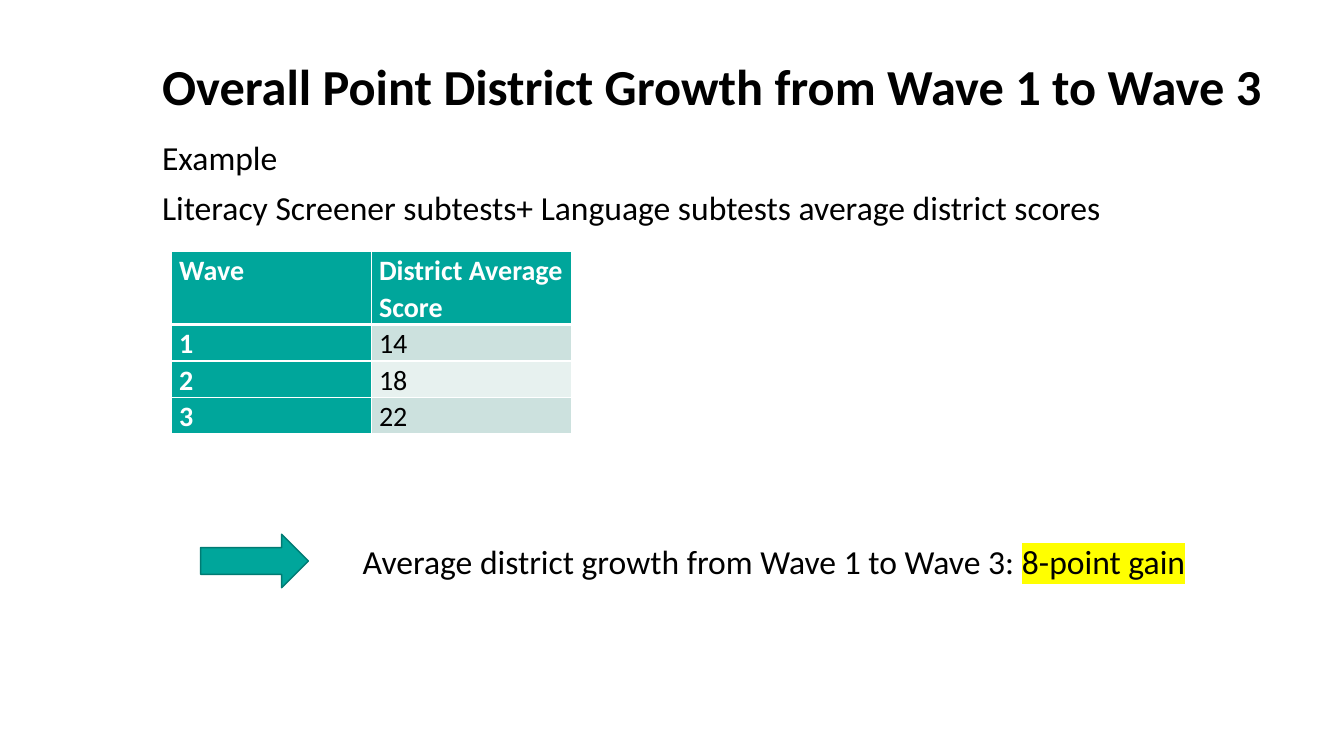
import pptx
import pptx.util
import pptx.dml.color
import pptx.enum.shapes
import pptx.enum.text
import pptx.oxml
import pptx.oxml.ns

Pt = pptx.util.Pt
RGB = pptx.dml.color.RGBColor.from_string
ANCHOR = pptx.enum.text.MSO_ANCHOR

COLORS = {"text": "000000", "white": "FFFFFF", "teal": "00A69B", "edge": "007B73",
          "band_dark": "CCE1DE", "band_light": "E7F1EF", "highlight": "FFFF00"}
FONT = "Calibri"
TITLE = "Overall Point District Growth from Wave 1 to Wave 3"
INTRO = ["Example",
         "Literacy Screener subtests+ Language subtests average district scores"]
SCORES = [("Wave", "District Average Score"), ("1", "14"), ("2", "18"), ("3", "22")]
RESULT = "Average district growth from Wave 1 to Wave 3: "
GAIN = "8-point gain"

LEFT, WIDTH = 108.7, 810.7
TABLE_LEFT, TABLE_TOP, COL_WIDTH, ROW_HEIGHT = 122.6, 179.6, 142.8, 26.1
RESULT_LEFT, RESULT_TOP, RESULT_HEIGHT = 252, 383, 36


def add_text(p, text, size=24, color="text", bold=False, highlight=None):
    r = p.add_run()
    r.text = text
    r.font.name, r.font.size, r.font.bold = FONT, Pt(size), bold
    r.font.color.rgb = RGB(COLORS[color])
    if highlight:
        mark = pptx.oxml.parse_xml(
            f'<a:highlight {pptx.oxml.ns.nsdecls("a")}>'
            f'<a:srgbClr val="{COLORS[highlight]}"/></a:highlight>')
        r.font.fill._xPr.find(pptx.oxml.ns.qn("a:solidFill")).addnext(mark)


def add_box(s, left, top, width, height, anchor=ANCHOR.MIDDLE):
    tf = s.shapes.add_textbox(Pt(left), Pt(top), Pt(width), Pt(height)).text_frame
    tf.word_wrap = True
    tf.vertical_anchor = anchor
    return tf


def set_borders(cell, row):
    widths = {"lnL": 1, "lnR": 1, "lnT": 3 if row == 1 else 1, "lnB": 3 if row == 0 else 1}
    tcPr = cell._tc.get_or_add_tcPr()
    for i, (side, width) in enumerate(widths.items()):
        tcPr.insert(i, pptx.oxml.parse_xml(
            f'<a:{side} {pptx.oxml.ns.nsdecls("a")} w="{Pt(width)}"><a:solidFill>'
            f'<a:srgbClr val="{COLORS["white"]}"/></a:solidFill></a:{side}>'))


def add_scores(s):
    heights = [2 * ROW_HEIGHT] + [ROW_HEIGHT] * (len(SCORES) - 1)
    table = s.shapes.add_table(len(SCORES), 2, Pt(TABLE_LEFT), Pt(TABLE_TOP),
                               Pt(2 * COL_WIDTH), Pt(sum(heights))).table
    for column in table.columns:
        column.width = Pt(COL_WIDTH)
    for i, (row, height) in enumerate(zip(SCORES, heights)):
        table.rows[i].height = Pt(height)
        for j, text in enumerate(row):
            cell = table.cell(i, j)
            head = i == 0 or j == 0
            fill = "teal" if head else ("band_dark" if i % 2 else "band_light")
            cell.fill.solid()
            cell.fill.fore_color.rgb = RGB(COLORS[fill])
            cell.margin_left = cell.margin_right = Pt(5.4)
            cell.margin_top = cell.margin_bottom = 0
            p = cell.text_frame.paragraphs[0]
            p.line_spacing = 1.07
            add_text(p, text, size=20, color="white" if head else "text", bold=head)
            set_borders(cell, i)


def main():
    prs = pptx.Presentation()
    prs.slide_width, prs.slide_height = Pt(960), Pt(540)
    s = prs.slides.add_slide(prs.slide_layouts[6])

    tf = add_box(s, LEFT, 30.5, WIDTH, 60.5)
    add_text(tf.paragraphs[0], TITLE, size=36, bold=True)

    tf = add_box(s, LEFT, 97.2, WIDTH, 72, anchor=ANCHOR.TOP)
    for i, line in enumerate(INTRO):
        p = tf.add_paragraph() if i else tf.paragraphs[0]
        p.line_spacing = 0.9
        p.space_before = Pt(10 if i else 0)
        add_text(p, line)

    add_scores(s)

    arrow = s.shapes.add_shape(pptx.enum.shapes.MSO_SHAPE.RIGHT_ARROW,
                               Pt(143.3), Pt(381.6), Pt(77), Pt(38.2))
    arrow.shadow.inherit = False
    arrow.fill.solid()
    arrow.fill.fore_color.rgb = RGB(COLORS["teal"])
    arrow.line.color.rgb = RGB(COLORS["edge"])
    arrow.line.width = Pt(1)

    tf = add_box(s, RESULT_LEFT, RESULT_TOP, LEFT + WIDTH - RESULT_LEFT, RESULT_HEIGHT)
    p = tf.paragraphs[0]
    add_text(p, RESULT)
    add_text(p, GAIN, highlight="highlight")

    prs.save("out.pptx")


if __name__ == "__main__":
    main()
